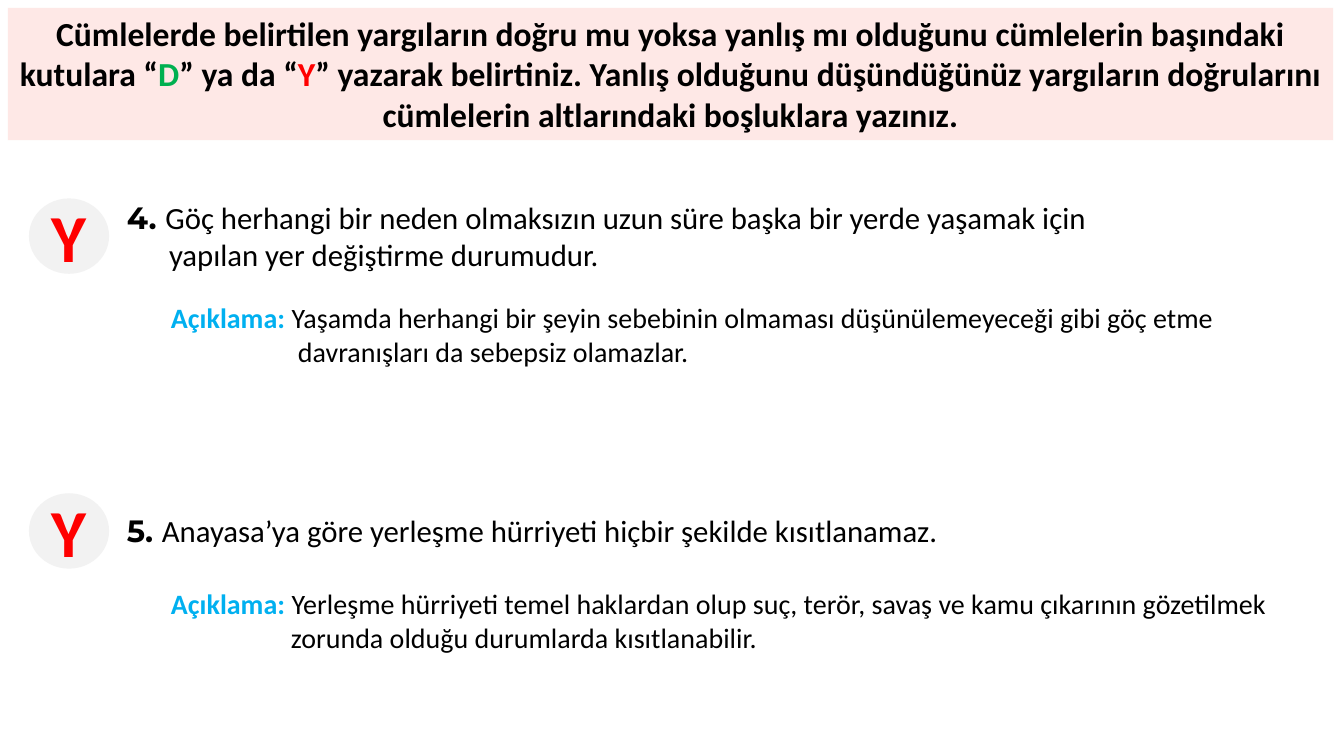
from pptx import Presentation
from pptx import util as u
from pptx.dml import color
from pptx.enum import shapes, text

BLACK, RED, GREEN, BLUE = "000000", "FF0000", "00B050", "00B0F0"


def rgb(value):
    return color.RGBColor.from_string(value)


class Sheet:
    body_font, number_font = "Calibri", "Montserrat"
    banner_fill, badge_fill = "FEE8E6", "F2F2F2"

    def __init__(self, prs):
        self.s = prs.slides.add_slide(prs.slide_layouts[5])

    def place(self, sp, box):
        for name, value in zip(("left", "top", "width", "height"), box):
            setattr(sp, name, u.Cm(value))

    def frame(self, sp, anchor=text.MSO_ANCHOR.TOP):
        tf = sp.text_frame
        options = {"word_wrap": True, "vertical_anchor": anchor,
                   "auto_size": text.MSO_AUTO_SIZE.NONE}
        for name, value in options.items():
            setattr(tf, name, value)
        return tf

    def run(self, p, words, size, fill=BLACK, bold=True, font=None):
        r = p.add_run()
        r.text = words
        style = {"name": font or self.body_font, "size": u.Pt(size), "bold": bold}
        for name, value in style.items():
            setattr(r.font, name, value)
        r.font.color.rgb = rgb(fill)

    def banner(self, box, paragraphs):
        sp = self.s.shapes.title
        self.place(sp, box)
        sp.fill.solid()
        sp.fill.fore_color.rgb = rgb(self.banner_fill)
        tf = self.frame(sp)
        for i, runs in enumerate(paragraphs):
            p = tf.add_paragraph() if i else tf.paragraphs[0]
            p.alignment = text.PP_ALIGN.CENTER
            for words, fill in runs:
                self.run(p, words, 24, fill)

    def badge(self, top, letter):
        sp = self.s.shapes.add_shape(
            shapes.MSO_SHAPE.OVAL, u.Cm(0.73), u.Cm(top), u.Cm(2.02), u.Cm(1.9))
        sp.shadow.inherit = False
        sp.fill.solid()
        sp.fill.fore_color.rgb = rgb(self.badge_fill)
        sp.line.fill.background()
        p = self.frame(sp, text.MSO_ANCHOR.MIDDLE).paragraphs[0]
        p.alignment = text.PP_ALIGN.CENTER
        self.run(p, letter, 48, RED)

    def note(self, box, lead, lines, size, hang, fill=BLACK, font=None):
        """Bold lead, then plain lines that hang under the first one."""
        sp = self.s.shapes.add_textbox(*map(u.Cm, box))
        p = self.frame(sp).paragraphs[0]
        pPr = p._p.get_or_add_pPr()
        pPr.set("marL", str(u.Cm(hang)))
        pPr.set("indent", str(-u.Cm(hang)))
        self.run(p, lead, size, fill, font=font)
        for i, line in enumerate(lines):
            if i:
                p.add_line_break()
            self.run(p, line, size, bold=False)

    def statement(self, top, number, lines):
        self.note((2.95, top, 26.14, 1.19), f"{number}. ", lines, 22, 1.06,
                  font=self.number_font)

    def explanation(self, top, lines, hang):
        self.note((4.06, top, 28.4, 1.96), "Açıklama: ", lines, 20, hang, BLUE)


def main():
    prs = Presentation()
    prs.slide_width, prs.slide_height = u.Cm(33.87), u.Cm(19.05)
    sheet = Sheet(prs)

    # Instruction banner
    sheet.banner((0.2, 0.2, 33.4, 3.33), [
        [("Cümlelerde belirtilen yargıların doğru mu yoksa yanlış mı olduğunu "
          "cümlelerin başındaki", BLACK)],
        [("kutulara “", BLACK), ("D", GREEN), ("” ya da “", BLACK), ("Y", RED),
         ("” yazarak belirtiniz. Yanlış olduğunu düşündüğünüz yargıların "
          "doğrularını cümlelerin altlarındaki boşluklara yazınız.", BLACK)],
    ])

    # Statement 4
    sheet.statement(4.88, 4, [
        "Göç herhangi bir neden olmaksızın uzun süre başka bir yerde yaşamak için",
        "yapılan yer değiştirme durumudur."])
    sheet.badge(5.0, "Y")
    sheet.explanation(7.46, [
        "Yaşamda herhangi bir şeyin sebebinin olmaması düşünülemeyeceği gibi göç etme",
        "davranışları da sebepsiz olamazlar."], 3.2)

    # Statement 5
    sheet.statement(12.78, 5, [
        "Anayasa’ya göre yerleşme hürriyeti hiçbir şekilde kısıtlanamaz."])
    sheet.badge(12.43, "Y")
    sheet.explanation(14.66, [
        "Yerleşme hürriyeti temel haklardan olup suç, terör, savaş ve kamu çıkarının gözetilmek",
        "zorunda olduğu durumlarda kısıtlanabilir."], 3.02)

    prs.save("out.pptx")


if __name__ == "__main__":
    main()
